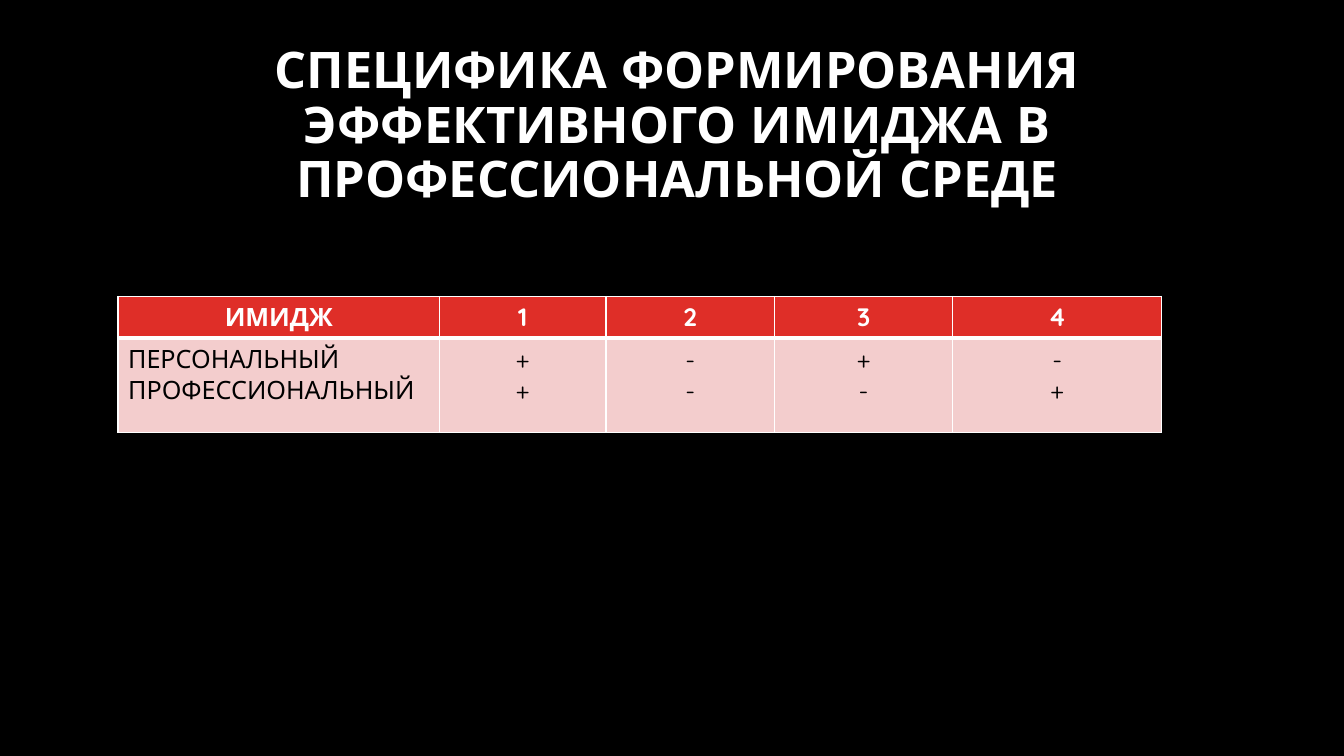
from lxml.etree import SubElement
from pptx import Presentation
from pptx.dml.color import RGBColor
from pptx.enum.text import MSO_ANCHOR as Anchor, MSO_AUTO_SIZE as AutoSize, PP_ALIGN as Align
from pptx.oxml.ns import qn
from pptx.util import Inches, Pt

BLACK = RGBColor(0x00, 0x00, 0x00)
WHITE = RGBColor(0xFF, 0xFF, 0xFF)
RED = RGBColor(0xDF, 0x2E, 0x28)
PINK = RGBColor(0xF3, 0xCD, 0xCD)

HEADING = "СПЕЦИФИКА ФОРМИРОВАНИЯ ЭФФЕКТИВНОГО ИМИДЖА В ПРОФЕССИОНАЛЬНОЙ СРЕДЕ"
IMAGE_TYPES = [
    ["ИМИДЖ", "1", "2", "3", "4"],
    ["ПЕРСОНАЛЬНЫЙ\nПРОФЕССИОНАЛЬНЫЙ", "+\n+", "-\n-", "+\n-", "-\n+"],
]
COLUMN_SHARES = [23.93, 12.38, 12.53, 13.28, 15.53]
ROW_SHARES = [5.33, 12.53]


class SlideBuilder:
    font_name = "Quicksand"

    def __init__(self, deck):
        self.width, self.height = deck.slide_width, deck.slide_height
        self.slide = deck.slides.add_slide(deck.slide_layouts[5])
        background = self.slide.background.fill
        background.solid()
        background.fore_color.rgb = BLACK

    def across(self, share):
        return round(self.width * share / 100)

    def down(self, share):
        return round(self.height * share / 100)

    def set_text(self, frame, text, size, color, bold, align):
        frame.text = text
        for paragraph in frame.paragraphs:
            paragraph.alignment = align
            for run in paragraph.runs:
                run.font.name = self.font_name
                run.font.size = Pt(size)
                run.font.bold = bold
                run.font.color.rgb = color

    def title(self, text, left, top, width, height):
        heading = self.slide.shapes.title
        heading.left, heading.top = self.across(left), self.down(top)
        heading.width, heading.height = self.across(width), self.down(height)
        frame = heading.text_frame
        frame.word_wrap = True
        frame.auto_size = AutoSize.NONE
        frame.vertical_anchor = Anchor.MIDDLE
        self.set_text(frame, text, 36, WHITE, True, Align.CENTER)
        frame.paragraphs[0].line_spacing = 0.9

    def borders(self, cell, points):
        properties = cell._tc.get_or_add_tcPr()
        for position, (side, weight) in enumerate(points.items()):
            line = SubElement(properties, qn(f"a:ln{side}"), w=str(Pt(weight)))
            fill = SubElement(line, qn("a:solidFill"))
            SubElement(fill, qn("a:srgbClr"), val=str(WHITE))
            properties.insert(position, line)

    def table(self, content, left, top, column_shares, row_shares):
        grid = self.slide.shapes.add_table(
            len(row_shares), len(column_shares), self.across(left), self.down(top),
            self.across(sum(column_shares)), self.down(sum(row_shares))).table
        for column, share in zip(grid.columns, column_shares):
            column.width = self.across(share)
        for row, share in zip(grid.rows, row_shares):
            row.height = self.down(share)
        for row_index, texts in enumerate(content):
            header = row_index == 0
            for column_index, text in enumerate(texts):
                cell = grid.cell(row_index, column_index)
                cell.fill.solid()
                cell.fill.fore_color.rgb = RED if header else PINK
                align = Align.CENTER if header or column_index else Align.LEFT
                self.set_text(cell.text_frame, text, 18, WHITE if header else BLACK, header, align)
                self.borders(cell, {"L": 1, "R": 1, "T": 1 if header else 3, "B": 3 if header else 1})


def main():
    deck = Presentation()
    deck.slide_width, deck.slide_height = Inches(13.33), Inches(7.5)
    builder = SlideBuilder(deck)
    builder.title(HEADING, 7.2, 4.27, 86.4, 25.07)
    builder.table(IMAGE_TYPES, 8.78, 39.2, COLUMN_SHARES, ROW_SHARES)
    deck.save("out.pptx")


if __name__ == "__main__":
    main()
